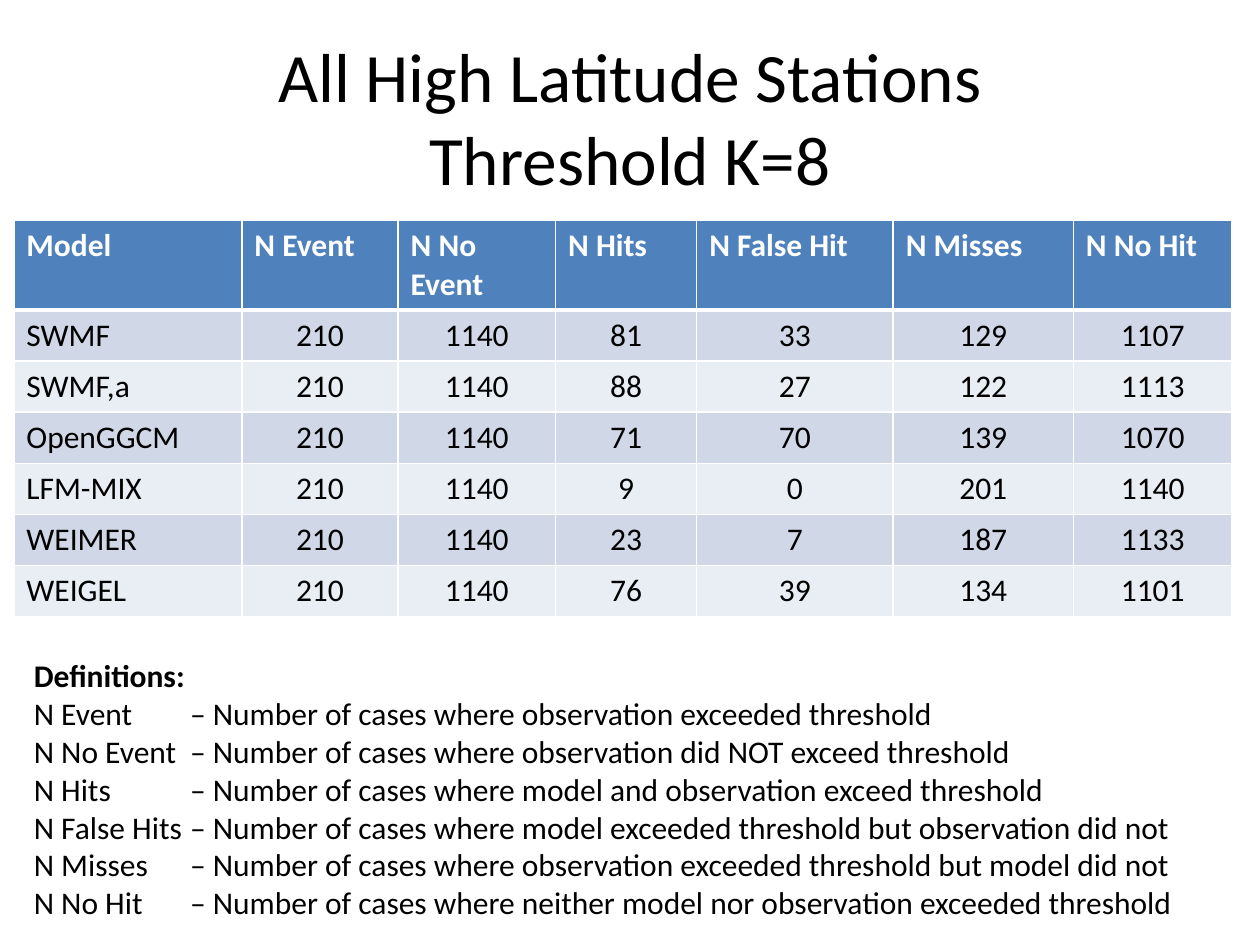
"""Build a slide comparing model event counts at high latitude stations."""
from lxml.etree import SubElement
from pptx import Presentation
from pptx.dml.color import RGBColor
from pptx.enum.text import MSO_ANCHOR as Anchor, MSO_AUTO_SIZE as AutoSize, PP_ALIGN as Align
from pptx.oxml.ns import qn
from pptx.util import Inches, Pt

BLACK = RGBColor(0x00, 0x00, 0x00)
WHITE = RGBColor(0xFF, 0xFF, 0xFF)
BLUE = RGBColor(0x4F, 0x81, 0xBD)
BANDS = RGBColor(0xD0, 0xD8, 0xE8), RGBColor(0xE9, 0xED, 0xF4)

COLUMN_WIDTHS = 18.1, 12.4, 12.5, 11.2, 15.6, 14.3, 12.6
HEADER_HEIGHT, ROW_HEIGHT = 7, 4
COUNTS = [
    ("Model", "N Event", "N No Event", "N Hits", "N False Hit", "N Misses", "N No Hit"),
    ("SWMF", 210, 1140, 81, 33, 129, 1107),
    ("SWMF,a", 210, 1140, 88, 27, 122, 1113),
    ("OpenGGCM", 210, 1140, 71, 70, 139, 1070),
    ("LFM-MIX", 210, 1140, 9, 0, 201, 1140),
    ("WEIMER", 210, 1140, 23, 7, 187, 1133),
    ("WEIGEL", 210, 1140, 76, 39, 134, 1101),
]
DEFINITIONS = [
    ("N Event", "observation exceeded threshold"),
    ("N No Event", "observation did NOT exceed threshold"),
    ("N Hits", "model and observation exceed threshold"),
    ("N False Hits", "model exceeded threshold but observation did not"),
    ("N Misses", "observation exceeded threshold but model did not"),
    ("N No Hit", "neither model nor observation exceeded threshold"),
]


class SlideBuilder:
    """Hold the style and the slide, measured on a grid of 100 columns by 75 rows."""

    font_name = "Calibri"
    body_size = 18

    def __init__(self, deck):
        """Add a title-only slide to the deck."""
        self.unit = deck.slide_width / 100
        self.slide = deck.slides.add_slide(deck.slide_layouts[5])

    def grid(self, *cells):
        """Convert grid units to slide lengths."""
        return [round(cell * self.unit) for cell in cells]

    def format(self, para, color=BLACK, size=body_size, bold=False):
        """Apply the font to every run of a paragraph."""
        for span in para.runs:
            span.font.name = self.font_name
            span.font.size = Pt(size)
            span.font.bold = bold
            span.font.color.rgb = color

    def title(self, text, place, size):
        """Move, fill and format the title placeholder."""
        box = self.slide.shapes.title
        box.left, box.top, box.width, box.height = self.grid(*place)
        frame = box.text_frame
        frame.text = text
        frame.vertical_anchor = Anchor.MIDDLE
        frame.auto_size = AutoSize.NONE
        frame.paragraphs[0].alignment = Align.CENTER
        self.format(frame.paragraphs[0], size=size)

    def borders(self, cell, top, bottom):
        """Draw white borders around a table cell."""
        properties = cell._tc.get_or_add_tcPr()
        for side, width in zip("LRTB", (1, 1, top, bottom)):
            line = SubElement(properties, qn(f"a:ln{side}"), w=str(Pt(width)))
            fill = SubElement(line, qn("a:solidFill"))
            SubElement(fill, qn("a:srgbClr"), val=str(WHITE))

    def table(self, records, left, top, widths):
        """Add a banded table with a bold header row."""
        heights = [HEADER_HEIGHT] + [ROW_HEIGHT] * (len(records) - 1)
        place = self.grid(left, top, sum(widths), sum(heights))
        table = self.slide.shapes.add_table(len(records), len(widths), *place).table
        for column, width in zip(table.columns, self.grid(*widths)):
            column.width = width
        for index, (row, height) in enumerate(zip(table.rows, self.grid(*heights))):
            row.height = height
            header = index == 0
            for position, (cell, value) in enumerate(zip(row.cells, records[index])):
                self.borders(cell, 3 if index == 1 else 1, 3 if header else 1)
                cell.fill.solid()
                cell.fill.fore_color.rgb = BLUE if header else BANDS[(index - 1) % 2]
                cell.text = str(value)
                para = cell.text_frame.paragraphs[0]
                para.alignment = Align.LEFT if header or position == 0 else Align.CENTER
                self.format(para, WHITE if header else BLACK, bold=header)

    def definitions(self, heading, entries, place, tab):
        """Add a heading and terms with their meanings aligned at a tab stop."""
        frame = self.slide.shapes.add_textbox(*self.grid(*place)).text_frame
        frame.word_wrap = True
        frame.text = heading
        self.format(frame.paragraphs[0], bold=True)
        for term, meaning in entries:
            para = frame.add_paragraph()
            stops = SubElement(para._p.get_or_add_pPr(), qn("a:tabLst"))
            SubElement(stops, qn("a:tab"), pos=str(self.grid(tab)[0]), algn="l")
            para.text = f"{term}\t– Number of cases where {meaning}"
            self.format(para)


def main():
    """Build and save the deck."""
    deck = Presentation()
    deck.slide_width, deck.slide_height = Inches(10), Inches(7.5)
    page = SlideBuilder(deck)
    page.title("All High Latitude Stations\vThreshold K=8", (5, 3, 90, 12.5), 39.6)
    page.table(COUNTS, 1.1, 17.5, COLUMN_WIDTHS)
    page.definitions("Definitions:", DEFINITIONS, (1.7, 51.6, 93.3, 22.2), 12.4)
    deck.save("out.pptx")


if __name__ == "__main__":
    main()
